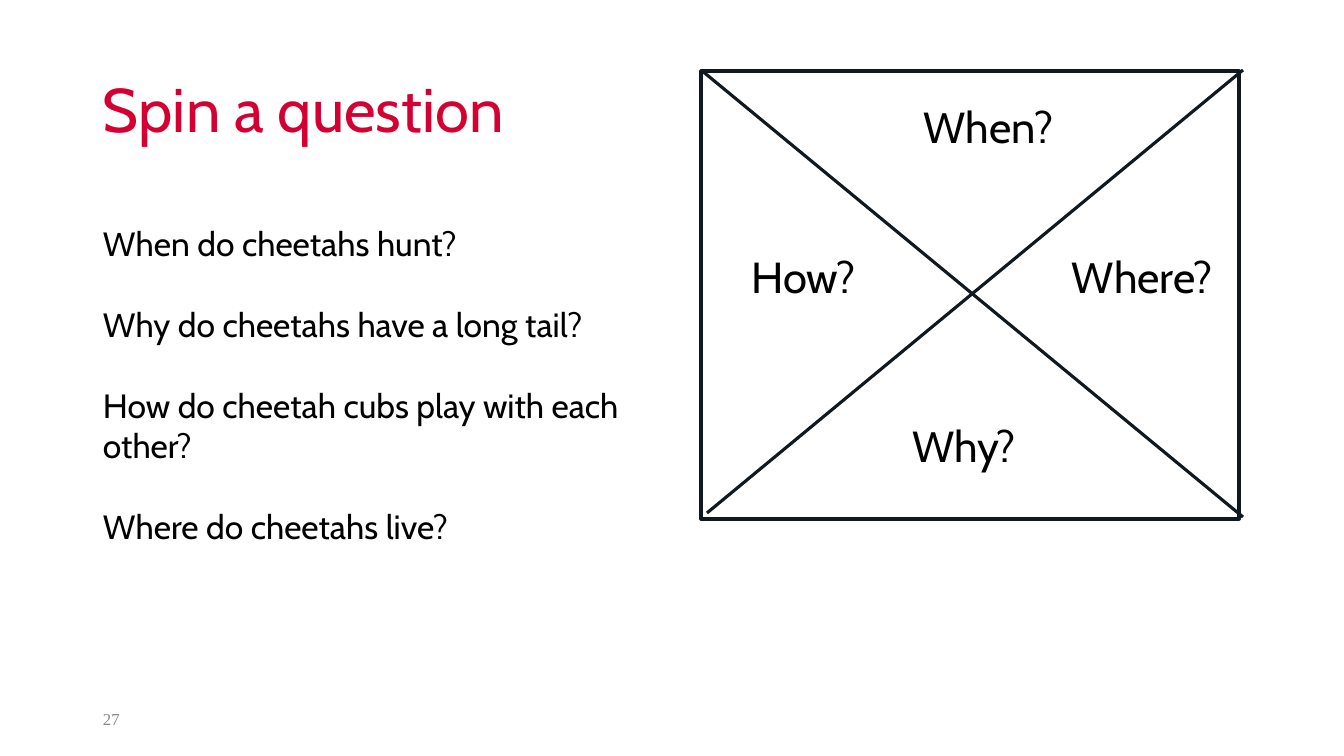
from lxml import etree
from pptx import Presentation
from pptx.dml.color import RGBColor
from pptx.enum.shapes import MSO_CONNECTOR, MSO_SHAPE
from pptx.enum.text import MSO_ANCHOR, MSO_AUTO_SIZE, PP_ALIGN
from pptx.oxml.ns import qn
from pptx.util import Emu, Pt

LEFT, CENTER = PP_ALIGN.LEFT, PP_ALIGN.CENTER
TOP, MIDDLE = MSO_ANCHOR.TOP, MSO_ANCHOR.MIDDLE
RED = RGBColor(0xD5, 0x00, 0x32)
BLACK = RGBColor(0x00, 0x00, 0x00)
INK = RGBColor(0x10, 0x18, 0x20)
GREY = RGBColor(0x88, 0x88, 0x88)
WHITE = RGBColor(0xFF, 0xFF, 0xFF)

# Content: boxes are (left, top, width, height) in px
TITLE = "Spin a question"
TITLE_BOX = (93, 40, 459, 146)
QUESTIONS = [
    "When do cheetahs hunt?",
    "Why do cheetahs have a long tail?",
    "How do cheetah cubs play with each other?",
    "Where do cheetahs live?",
]
QUESTIONS_BOX = (93, 213, 538, 393)
PAGE_NUMBER = "27"
PAGE_NUMBER_BOX = (93, 699, 302, 40)
SPINNER_BOX = (701, 71, 538, 448)
DIAGONALS = [(707, 513, 1243, 70), (701, 70, 1243, 517)]
SPINNER_LABELS = [
    ("When?", (891, 90, 195, 97)),
    ("How?", (733, 240, 141, 97)),
    ("Where?", (1055, 240, 175, 97)),
    ("Why?", (881, 409, 166, 97)),
]
LINE_WIDTH = Pt(2.25)
SLIDE_W, SLIDE_H = 1344, 756


def px(*lengths):
    return [Emu(round(n * 914400 / 100.8)) for n in lengths]


def write(sp, *lines, size, color=BLACK, font="Cabin", align=LEFT,
          anchor=TOP, pad=10, gap=0, spacing=None):
    tf = sp.text_frame
    tf.word_wrap = True
    tf.auto_size = MSO_AUTO_SIZE.NONE
    tf.vertical_anchor = anchor
    tf.margin_left, tf.margin_right = px(10, 10)
    tf.margin_top, tf.margin_bottom = px(pad, pad)
    for i, line in enumerate(lines):
        p = tf.add_paragraph() if i else tf.paragraphs[0]
        p.alignment = align
        p.space_before = Pt(gap if i else 0)
        p.line_spacing = spacing
        r = p.add_run()
        r.text = line
        r.font.size = Pt(size)
        r.font.name = font
        r.font.color.rgb = color


prs = Presentation()
prs.slide_width, prs.slide_height = px(SLIDE_W, SLIDE_H)
s = prs.slides.add_slide(prs.slide_layouts[5])

# Title
title = s.shapes.title
title.left, title.top, title.width, title.height = px(*TITLE_BOX)
write(title, TITLE, size=44, color=RED, anchor=MIDDLE, pad=5, spacing=0.9)

# Page number
write(s.shapes.add_textbox(*px(*PAGE_NUMBER_BOX)), PAGE_NUMBER, size=12,
      color=GREY, font="Times New Roman", anchor=MIDDLE, pad=5)

# Example questions
write(s.shapes.add_textbox(*px(*QUESTIONS_BOX)), *QUESTIONS, size=24, gap=29)

# Spinner: frame, diagonals and question words
frame = s.shapes.add_shape(MSO_SHAPE.RECTANGLE, *px(*SPINNER_BOX))
frame.shadow.inherit = False
frame.fill.solid()
frame.fill.fore_color.rgb = WHITE
frame.line.color.rgb = INK
frame.line.width = LINE_WIDTH

for ends in DIAGONALS:
    diagonal = s.shapes.add_connector(MSO_CONNECTOR.STRAIGHT, *px(*ends))
    diagonal.line.color.rgb = INK
    diagonal.line.width = LINE_WIDTH
    etree.SubElement(diagonal._element.spPr, qn("a:effectLst"))

for word, box in SPINNER_LABELS:
    write(s.shapes.add_textbox(*px(*box)), word, size=31, align=CENTER)

prs.save("out.pptx")
